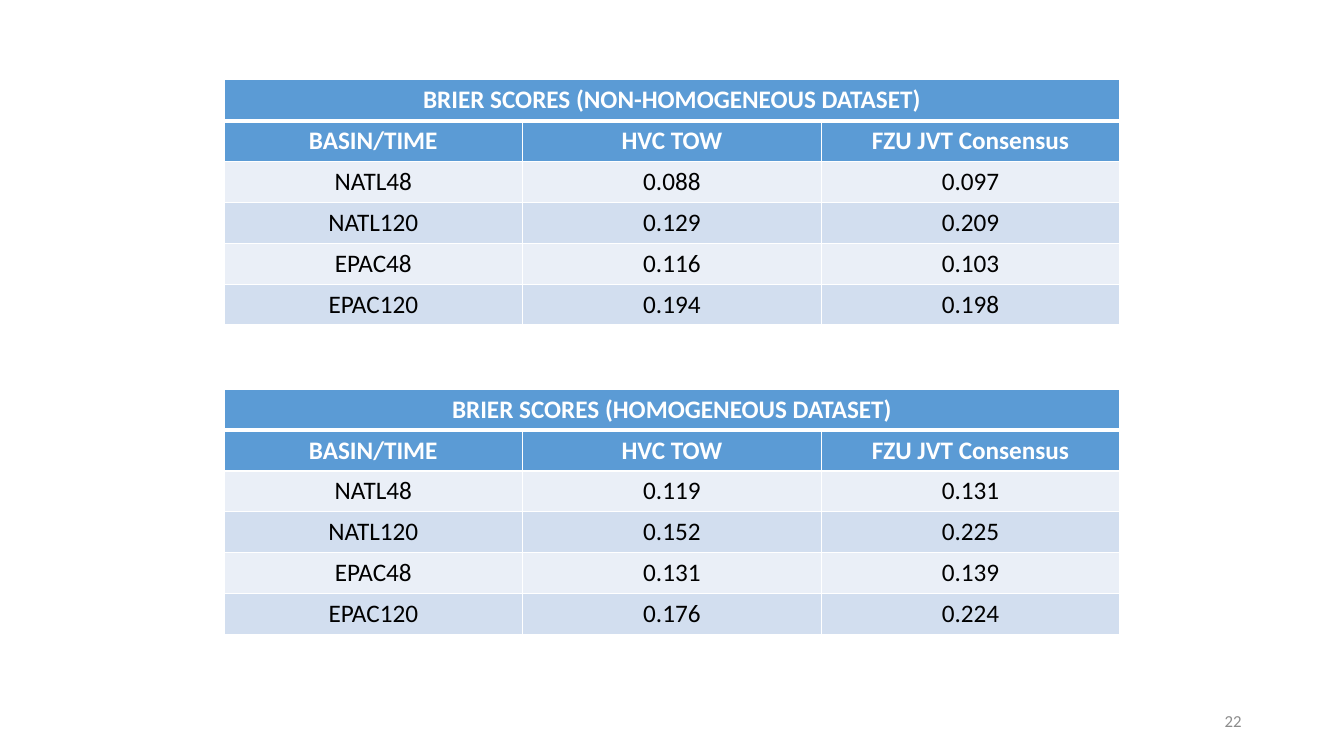
from dataclasses import dataclass

from lxml.etree import SubElement
from pptx import Presentation
from pptx.dml.color import RGBColor as RGB
from pptx.enum.text import MSO_ANCHOR as Anchor, PP_ALIGN as Align
from pptx.oxml.ns import qn
from pptx.util import Pt

COLUMNS = ("BASIN/TIME", "HVC TOW", "FZU JVT Consensus")
SCORE_TABLES = [
    ("BRIER SCORES (NON-HOMOGENEOUS DATASET)", [
        ("NATL48", "0.088", "0.097"),
        ("NATL120", "0.129", "0.209"),
        ("EPAC48", "0.116", "0.103"),
        ("EPAC120", "0.194", "0.198"),
    ]),
    ("BRIER SCORES (HOMOGENEOUS DATASET)", [
        ("NATL48", "0.119", "0.131"),
        ("NATL120", "0.152", "0.225"),
        ("EPAC48", "0.131", "0.139"),
        ("EPAC120", "0.176", "0.224"),
    ]),
]
PAGE_NUMBER = "22"


@dataclass(frozen=True)
class Theme:
    font: str = "Calibri"
    table_size: float = 18
    page_size: float = 12
    header: str = "5B9BD5"
    bands: tuple = ("EAEFF7", "D2DEEF")
    header_text: str = "FFFFFF"
    body_text: str = "000000"
    page_text: str = "8C8C8C"
    rule: str = "FFFFFF"
    thin: float = 1
    thick: float = 3


THEME = Theme()
SLIDE_WIDTH, SLIDE_HEIGHT = 960, 540
TABLE_WIDTH, ROW_HEIGHT = 640, 29.2
TABLE_LEFT = (SLIDE_WIDTH - TABLE_WIDTH) / 2
FIRST_TOP, TABLE_STEP = 57, 221
HEADER_ROWS = 2


def write(frame, wording, align, color, **font_format):
    paragraph = frame.paragraphs[0]
    paragraph.alignment = align
    run = paragraph.add_run()
    run.text = wording
    run.font.color.rgb = RGB.from_string(color)
    for name, value in {"name": THEME.font, **font_format}.items():
        setattr(run.font, name, value)


def draw_borders(cell, row):
    """Rule all four sides, with a thick line between the caption and the column heads."""
    widths = {
        "lnL": THEME.thin,
        "lnR": THEME.thin,
        "lnT": THEME.thick if row == 1 else THEME.thin,
        "lnB": THEME.thick if row == 0 else THEME.thin,
    }
    properties = cell._tc.get_or_add_tcPr()
    for side, width in widths.items():
        line = SubElement(properties, qn(f"a:{side}"), w=str(int(Pt(width))))
        fill = SubElement(line, qn("a:solidFill"))
        SubElement(fill, qn("a:srgbClr"), val=THEME.rule)


def add_score_table(slide, top, caption, scores):
    rows = [(caption, "", ""), COLUMNS, *scores]
    table = slide.shapes.add_table(
        len(rows), len(COLUMNS), Pt(TABLE_LEFT), Pt(top),
        Pt(TABLE_WIDTH), Pt(ROW_HEIGHT * len(rows))).table
    for column in table.columns:
        column.width = Pt(TABLE_WIDTH / len(COLUMNS))
    table.cell(0, 0).merge(table.cell(0, len(COLUMNS) - 1))

    for r, entries in enumerate(rows):
        is_header = r < HEADER_ROWS
        background = THEME.header if is_header else THEME.bands[r % 2]
        color = THEME.header_text if is_header else THEME.body_text
        for c, entry in enumerate(entries):
            cell = table.cell(r, c)
            draw_borders(cell, r)
            cell.fill.solid()
            cell.fill.fore_color.rgb = RGB.from_string(background)
            if entry:
                write(cell.text_frame, entry, Align.CENTER, color,
                      size=Pt(THEME.table_size), bold=is_header)


def add_page_number(slide):
    frame = slide.shapes.add_textbox(Pt(678), Pt(500.5), Pt(216), Pt(28.75)).text_frame
    frame.word_wrap = True
    frame.vertical_anchor = Anchor.MIDDLE
    write(frame, PAGE_NUMBER, Align.RIGHT, THEME.page_text, size=Pt(THEME.page_size))


def main():
    deck = Presentation()
    deck.slide_width, deck.slide_height = Pt(SLIDE_WIDTH), Pt(SLIDE_HEIGHT)
    slide = deck.slides.add_slide(deck.slide_layouts.get_by_name("Blank"))
    for i, (caption, scores) in enumerate(SCORE_TABLES):
        add_score_table(slide, FIRST_TOP + i * TABLE_STEP, caption, scores)
    add_page_number(slide)
    deck.save("out.pptx")


if __name__ == "__main__":
    main()
